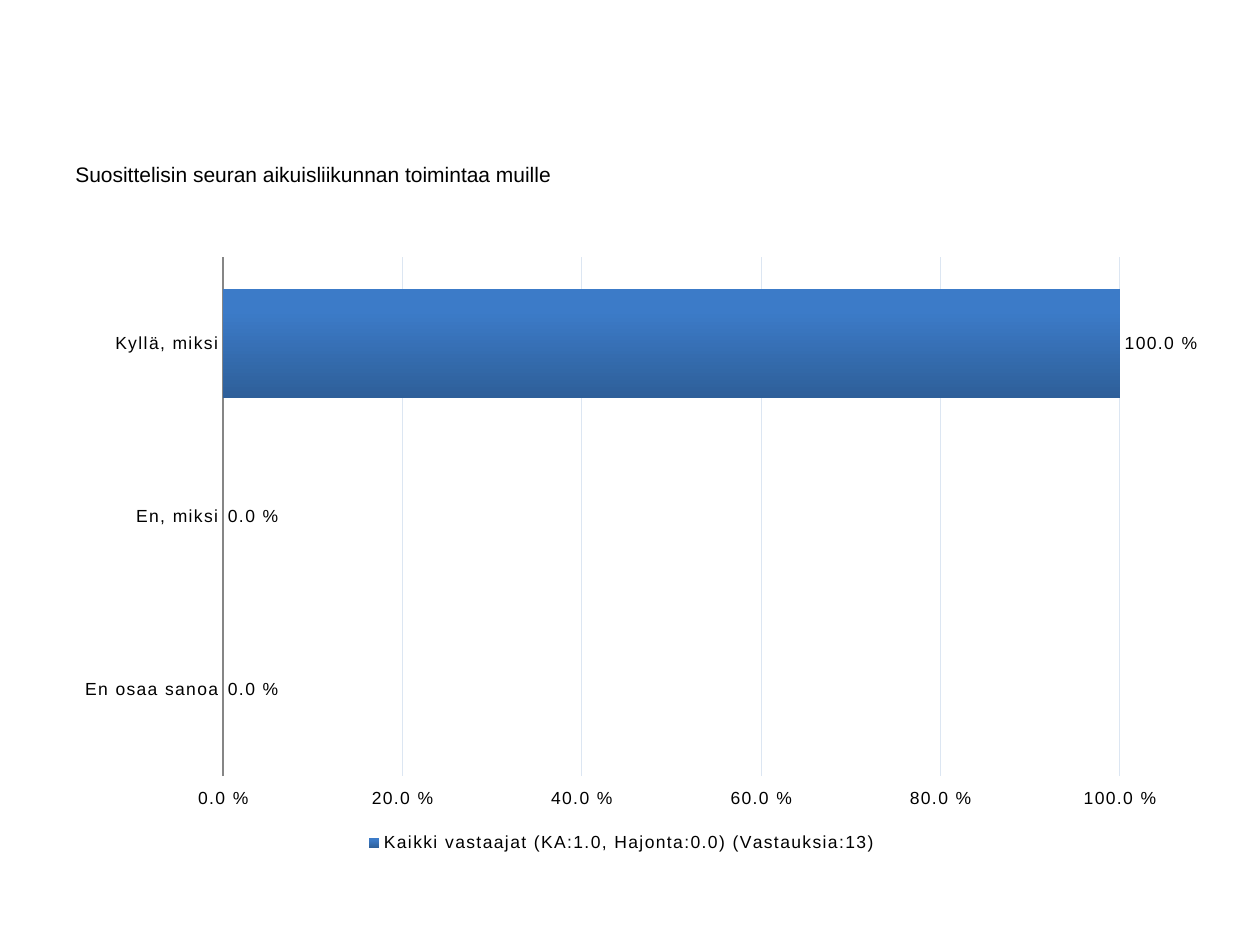
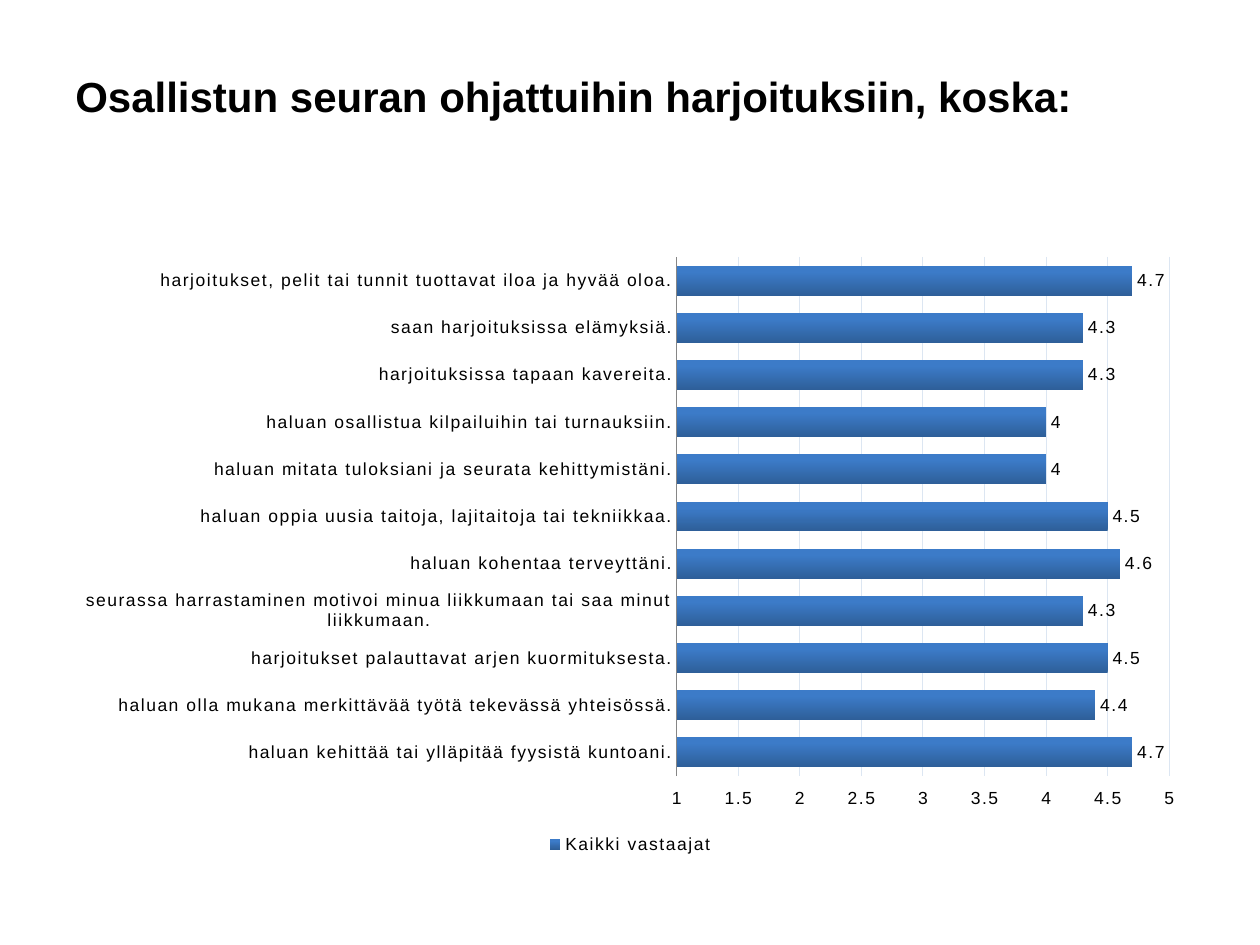
from lxml.etree import SubElement
from pptx import Presentation
from pptx.chart.data import CategoryChartData as ChartData
from pptx.dml.color import RGBColor
from pptx.enum.chart import (
    XL_CHART_TYPE as ChartType,
    XL_LABEL_POSITION as LabelPosition,
    XL_LEGEND_POSITION as LegendPosition,
    XL_TICK_LABEL_POSITION as TickLabelPosition,
    XL_TICK_MARK as TickMark,
)
from pptx.enum.text import MSO_ANCHOR as Anchor
from pptx.oxml.ns import qn
from pptx.util import Pt

PX = 9144
COLORS = {
    "text": "000000",
    "bar_top": "3C7BC8",
    "bar_bottom": "2E5F99",
    "grid": "DCE6F2",
    "axis": "868686",
}
FONT = "Arial"
CHART_BOX = (50, 194, 900, 488)
PLOT_TOP, PLOT_BOTTOM = 204, 616
PERCENT = "0.0\\ %"


def color(name):
    """Return the named colour."""
    return RGBColor.from_string(COLORS[name])


class SurveyDeck:
    """Holds the shared style and the current slide."""

    def __init__(self):
        """Start an empty presentation in 4:3 format."""
        self.presentation = Presentation()
        self.presentation.slide_width = 1000 * PX
        self.presentation.slide_height = 750 * PX
        self.slide = None

    def add_slide(self):
        """Add a blank slide and make it current."""
        layout = self.presentation.slide_layouts[6]
        self.slide = self.presentation.slides.add_slide(layout)

    def style_font(self, font, size, bold=False):
        """Apply the shared typeface and text colour."""
        font.name = FONT
        font.size = Pt(size)
        font.bold = bold
        font.color.rgb = color("text")

    def heading(self, text, top, height, size, bold=False, anchor=Anchor.TOP, before=0):
        """Add a full-width line of heading text."""
        shape = self.slide.shapes.add_textbox(50 * PX, top * PX, 900 * PX, height * PX)
        frame = shape.text_frame
        frame.word_wrap = True
        frame.vertical_anchor = anchor
        paragraph = frame.paragraphs[0]
        paragraph.space_before = Pt(before)
        run = paragraph.add_run()
        run.text = text
        self.style_font(run.font, size, bold)

    def bar_chart(self, series_name, answers, limits, step, plot_sides,
                  number_format="General", spacing=100, legend_place=None):
        """Add a horizontal bar chart with the first answer on top."""
        data = ChartData(number_format=number_format)
        data.categories = [answer for answer, _ in answers]
        data.add_series(series_name, [value for _, value in answers])
        box = [length * PX for length in CHART_BOX]
        chart = self.slide.shapes.add_chart(ChartType.BAR_CLUSTERED, *box, data).chart
        chart.has_title = False
        self.style_font(chart.font, 10)
        self.style_axes(chart, limits, step, number_format)
        self.style_bars(chart.plots[0], number_format)
        chart.has_legend = True
        chart.legend.position = LegendPosition.BOTTOM
        chart.legend.include_in_layout = False
        self.style_font(chart.legend.font, 10)
        left, right = plot_sides
        plot_size = (right - left, PLOT_BOTTOM - PLOT_TOP)
        self.place(chart, "plotArea", 0, (left, PLOT_TOP), plot_size)
        if legend_place:
            self.place(chart, "legend", 1, legend_place)
        for properties in chart.element.iter(qn("a:defRPr")):
            properties.set("spc", str(spacing))

    def style_axes(self, chart, limits, step, number_format):
        """Style the answer axis and the value axis with its grid."""
        answer_axis, value_axis = chart.category_axis, chart.value_axis
        for axis in (answer_axis, value_axis):
            axis.major_tick_mark = axis.minor_tick_mark = TickMark.NONE
            self.style_font(axis.tick_labels.font, 10)
        answer_axis.reverse_order = True
        answer_axis.format.line.color.rgb = color("axis")
        answer_axis.format.line.width = Pt(0.75)
        value_axis.tick_label_position = TickLabelPosition.HIGH
        value_axis.minimum_scale, value_axis.maximum_scale = limits
        value_axis.major_unit = step
        value_axis.tick_labels.number_format = number_format
        value_axis.tick_labels.number_format_is_linked = False
        value_axis.format.line.fill.background()
        grid = value_axis.major_gridlines.format.line
        grid.color.rgb = color("grid")
        grid.width = Pt(0.5)

    def style_bars(self, plot, number_format):
        """Give the bars a gradient and value labels."""
        plot.gap_width = 58
        plot.vary_by_categories = False
        fill = plot.series[0].format.fill
        fill.gradient()
        fill.gradient_angle = 90
        bottom, top = fill.gradient_stops
        bottom.color.rgb = color("bar_bottom")
        top.color.rgb = color("bar_top")
        top.position = 0.8
        plot.has_data_labels = True
        labels = plot.data_labels
        labels.show_value = True
        labels.position = LabelPosition.OUTSIDE_END
        labels.number_format = number_format
        labels.number_format_is_linked = False
        self.style_font(labels.font, 10)

    def place(self, chart, part_name, index, corner, size=None):
        """Fix a chart part at a slide position, with a size if given."""
        chart_left, chart_top, width, height = CHART_BOX
        part = chart.element.find(".//" + qn(f"c:{part_name}"))
        for old_layout in part.findall(qn("c:layout")):
            part.remove(old_layout)
        layout = SubElement(part, qn("c:layout"))
        part.insert(index, layout)
        manual = SubElement(layout, qn("c:manualLayout"))
        settings = {"layoutTarget": "inner"} if size else {}
        settings.update(xMode="edge", yMode="edge")
        settings["x"] = (corner[0] - chart_left) / width
        settings["y"] = (corner[1] - chart_top) / height
        if size:
            settings["w"] = size[0] / width
            settings["h"] = size[1] / height
        for name, value in settings.items():
            SubElement(manual, qn(f"c:{name}")).set("val", str(value))


def main():
    """Build both survey slides."""
    deck = SurveyDeck()

    deck.add_slide()
    deck.heading("Suosittelisin seuran aikuisliikunnan toimintaa muille", 123, 59, 12, before=2.4)
    deck.bar_chart(
        "Kaikki vastaajat (KA:1.0, Hajonta:0.0) (Vastauksia:13)",
        [("Kyllä, miksi", 1), ("En, miksi", 0), ("En osaa sanoa", 0)],
        limits=(0, 1),
        step=0.2,
        plot_sides=(177, 889),
        number_format=PERCENT,
        spacing=90,
        legend_place=(288, 659),
    )

    deck.add_slide()
    deck.heading(
        "Osallistun seuran ohjattuihin harjoituksiin, koska:",
        36, 80, 24, bold=True, anchor=Anchor.MIDDLE,
    )
    reasons = [
        ("harjoitukset, pelit tai tunnit tuottavat iloa ja hyvää oloa.", 4.7),
        ("saan harjoituksissa elämyksiä.", 4.3),
        ("harjoituksissa tapaan kavereita.", 4.3),
        ("haluan osallistua kilpailuihin tai turnauksiin.", 4),
        ("haluan mitata tuloksiani ja seurata kehittymistäni.", 4),
        ("haluan oppia uusia taitoja, lajitaitoja tai tekniikkaa.", 4.5),
        ("haluan kohentaa terveyttäni.", 4.6),
        ("seurassa harrastaminen motivoi minua liikkumaan tai saa minut liikkumaan.", 4.3),
        ("harjoitukset palauttavat arjen kuormituksesta.", 4.5),
        ("haluan olla mukana merkittävää työtä tekevässä yhteisössä.", 4.4),
        ("haluan kehittää tai ylläpitää fyysistä kuntoani.", 4.7),
    ]
    deck.bar_chart("Kaikki vastaajat", reasons, limits=(1, 5), step=0.5, plot_sides=(537, 928))

    deck.presentation.save("out.pptx")


if __name__ == "__main__":
    main()
